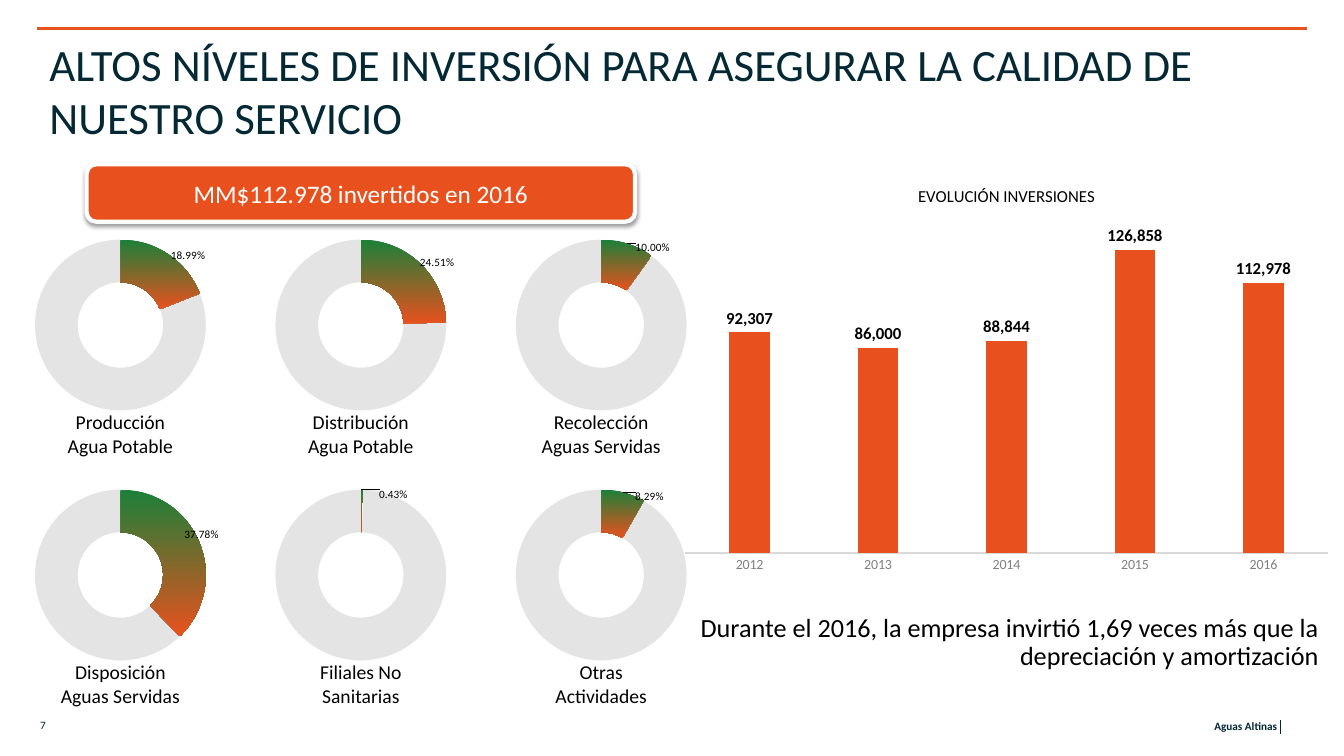
import pptx
import pptx.chart.data
import pptx.dml.color
import pptx.enum.chart
import pptx.enum.shapes
import pptx.enum.text
import pptx.oxml
import pptx.oxml.ns
import pptx.util

RGB = pptx.dml.color.RGBColor
ORANGE = RGB(0xE8, 0x51, 0x1E)
GREEN = RGB(0x1B, 0x80, 0x39)
NAVY = RGB(0x04, 0x28, 0x34)
INK = RGB(0x04, 0x25, 0x35)
BLACK = RGB(0, 0, 0)
WHITE = RGB(0xFF, 0xFF, 0xFF)
GRAY = RGB(0x80, 0x80, 0x80)
PALE = RGB(0xD9, 0xD9, 0xD9)
ASH = RGB(0xA6, 0xA6, 0xA6)

ALIGN = pptx.enum.text.PP_ALIGN
ANCHOR = pptx.enum.text.MSO_ANCHOR
KIND = pptx.enum.chart.XL_CHART_TYPE
TICK = pptx.enum.chart.XL_TICK_MARK
SHAPE = pptx.enum.shapes.MSO_SHAPE
NS = pptx.oxml.ns.nsdecls("a", "c")


def xml(text):
    return pptx.oxml.parse_xml(text.replace(">", f" {NS}>", 1))


def layout(inner, **vals):
    items = "".join(f'<c:{k} val="{v}"/>' for k, v in vals.items())
    return xml(f"<c:layout><c:manualLayout>{inner}{items}</c:manualLayout></c:layout>")


class Deck:
    font = "Calibri"
    cell = pptx.util.Inches(0.1)

    def __init__(self, cols, rows):
        self.prs = pptx.Presentation()
        self.prs.slide_width, self.prs.slide_height = self.grid(cols, rows)
        self.slide = self.prs.slides.add_slide(self.prs.slide_layouts[5])
        self.shapes = self.slide.shapes

    def grid(self, *units):
        return [round(u * self.cell) for u in units]

    def style(self, font, size, color, bold=False):
        font.name, font.size, font.bold = self.font, pptx.util.Pt(size), bold
        font.color.rgb = color

    def put(self, frame, text, size, color, align=ALIGN.LEFT,
            anchor=ANCHOR.TOP, bold=False, wrap=True, space=None):
        frame.word_wrap = wrap
        frame.auto_size = pptx.enum.text.MSO_AUTO_SIZE.NONE
        frame.vertical_anchor = anchor
        para = frame.paragraphs[0]
        para.alignment = align
        para.line_spacing = space
        for num, line in enumerate(text.split("\n")):
            if num:
                para.add_line_break()
            run = para.add_run()
            run.text = line
            self.style(run.font, size, color, bold)

    def title(self, box, text):
        shape = self.shapes.title
        shape.left, shape.top, shape.width, shape.height = self.grid(*box)
        self.put(shape.text_frame, text, 32, NAVY)

    def text(self, box, text, size, color, **look):
        shape = self.shapes.add_textbox(*self.grid(*box))
        self.put(shape.text_frame, text, size, color, **look)

    def line(self, ends, color, width):
        kind = pptx.enum.shapes.MSO_CONNECTOR.STRAIGHT
        line = self.shapes.add_connector(kind, *self.grid(*ends))
        line.line.color.rgb = color
        line.line.width = pptx.util.Pt(width)
        line._element.spPr.append(xml("<a:effectLst></a:effectLst>"))

    def badge(self, box, text):
        shape = self.shapes.add_shape(SHAPE.ROUNDED_RECTANGLE, *self.grid(*box))
        shape.fill.solid()
        shape.fill.fore_color.rgb = ORANGE
        shape.line.color.rgb = WHITE
        shape.line.width = pptx.util.Pt(3)
        shape.shadow.inherit = False
        shape._element.spPr.find(pptx.oxml.ns.qn("a:effectLst")).append(xml(
            '<a:outerShdw blurRad="39400" dist="20300" dir="5400000" rotWithShape="0">'
            '<a:srgbClr val="000000"><a:alpha val="38000"/></a:srgbClr></a:outerShdw>'))
        self.put(shape.text_frame, text, 18, WHITE,
                 align=ALIGN.CENTER, anchor=ANCHOR.MIDDLE)

    def chart(self, kind, box, cats, vals, form, size, area):
        data = pptx.chart.data.CategoryChartData(number_format=form)
        data.categories = cats
        data.add_series("Inversiones", vals)
        chart = self.shapes.add_chart(kind, *self.grid(*box), data).chart
        chart.has_legend = False
        chart.has_title = False
        self.style(chart.font, size, BLACK)
        plot = chart._chartSpace.xpath("c:chart/c:plotArea")[0]
        for old in plot.xpath("c:layout"):
            plot.remove(old)
        inner = ('<c:layoutTarget val="inner"/><c:xMode val="edge"/>'
                 '<c:yMode val="edge"/>')
        plot.insert(0, layout(inner, **dict(zip("xywh", area))))
        return chart

    def ring(self, box, share, shift):
        chart = self.chart(KIND.DOUGHNUT, box, ["1", "2"], [share, round(1 - share, 4)],
                           "0.00%", 18, (0.07, 0.07, 0.86, 0.86))
        chart._chartSpace.xpath(".//c:holeSize")[0].set("val", "80")
        series = chart.plots[0].series[0]
        part, rest = series.points[0], series.points[1]
        fill = part.format.fill
        fill.gradient()
        fill.gradient_angle = 270
        for stop, color, place in zip(fill.gradient_stops, (GREEN, ORANGE), (0, 1)):
            stop.color.rgb = color
            stop.position = place
        fill = rest.format.fill
        fill.solid()
        fill.fore_color.rgb = ASH
        rest.format.line.fill.background()
        part.format.line.fill.background()
        tint = chart._chartSpace.xpath(".//c:dPt/c:spPr/a:solidFill/a:srgbClr")[0]
        tint.append(xml('<a:alpha val="30000"></a:alpha>'))
        series.data_labels.show_value = False
        self.style(part.data_label.font, 8, BLACK)
        label = chart._chartSpace.xpath(".//c:dLbl")[0]
        label.insert(1, layout("", x=shift, y=-0.08))
        label.insert(2, xml('<c:numFmt formatCode="0.00%" sourceLinked="0"></c:numFmt>'))

    def bars(self, box, name, cats, vals):
        form = "#,##0"
        chart = self.chart(KIND.COLUMN_CLUSTERED, box, cats, vals, form, 10,
                           (0, 0.12, 1, 0.78))
        chart.has_title = True
        run = chart.chart_title.text_frame.paragraphs[0].add_run()
        run.text = name
        self.style(run.font, 12, BLACK)
        axis = chart.value_axis
        axis.minimum_scale, axis.maximum_scale = 0, 140000
        axis.has_major_gridlines = False
        axis.visible = False
        axis = chart.category_axis
        axis.major_tick_mark = axis.minor_tick_mark = TICK.NONE
        axis.format.line.color.rgb = PALE
        axis.format.line.width = pptx.util.Pt(1.25)
        self.style(axis.tick_labels.font, 10, GRAY)
        plot = chart.plots[0]
        plot.gap_width = 219
        plot.vary_by_categories = False
        fill = plot.series[0].format.fill
        fill.solid()
        fill.fore_color.rgb = ORANGE
        plot.has_data_labels = True
        labels = plot.data_labels
        labels.show_value = True
        labels.number_format = form
        labels.number_format_is_linked = False
        labels.position = pptx.enum.chart.XL_LABEL_POSITION.OUTSIDE_END
        self.style(labels.font, 12, BLACK, True)


RINGS = [
    ("Producción\nAgua Potable", 0.1899, 0.16),
    ("Distribución\nAgua Potable", 0.2451, 0.16),
    ("Recolección\nAguas Servidas", 0.1, 0.16),
    ("Disposición\nAguas Servidas", 0.3778, 0.11),
    ("Filiales No\nSanitarias", 0.0043, 0.16),
    ("Otras\nActividades", 0.0829, 0.16),
]


def main():
    deck = Deck(133.33, 75)
    deck.text((105.2, 70.5, 22.5, 3), "Aguas Altinas", 8, INK,
              align=ALIGN.RIGHT, anchor=ANCHOR.MIDDLE, bold=True)
    deck.text((3, 70.4, 22.5, 3), "7", 8, INK, anchor=ANCHOR.MIDDLE)
    deck.line((127, 71.4, 127, 72.8), INK, 0.5)
    deck.line((3.7, 2.8, 129.7, 2.8), ORANGE, 2)
    deck.title((3.9, 3.1, 125.7, 7.2),
               "ALTOS NÍVELES DE INVERSIÓN PARA ASEGURAR LA CALIDAD DE NUESTRO SERVICIO")
    deck.text((64.9, 60.5, 66.9, 6.7),
              "Durante el 2016, la empresa invirtió 1,69 veces más que la "
              "depreciación y amortización", 18.7, BLACK, align=ALIGN.RIGHT, space=0.9)
    deck.bars((67.9, 16.6, 63.9, 42.5), "EVOLUCIÓN INVERSIONES",
              ["2012", "2013", "2014", "2015", "2016"],
              [92307, 86000, 88844, 126858, 112978])
    side = 19.7
    for num, (name, share, shift) in enumerate(RINGS):
        row, col = divmod(num, 3)
        left, top = 2.1 + 23.85 * col, 22.4 + 24.8 * row
        deck.ring((left, top, side, side), share, shift)
        deck.text((left, top + 17.8, side, 5.7), name, 14, BLACK,
                  align=ALIGN.CENTER, wrap=False)
    deck.badge((8.6, 16.3, 54.4, 5.7), "MM$112.978 invertidos en 2016")
    deck.prs.save("out.pptx")


if __name__ == "__main__":
    main()
